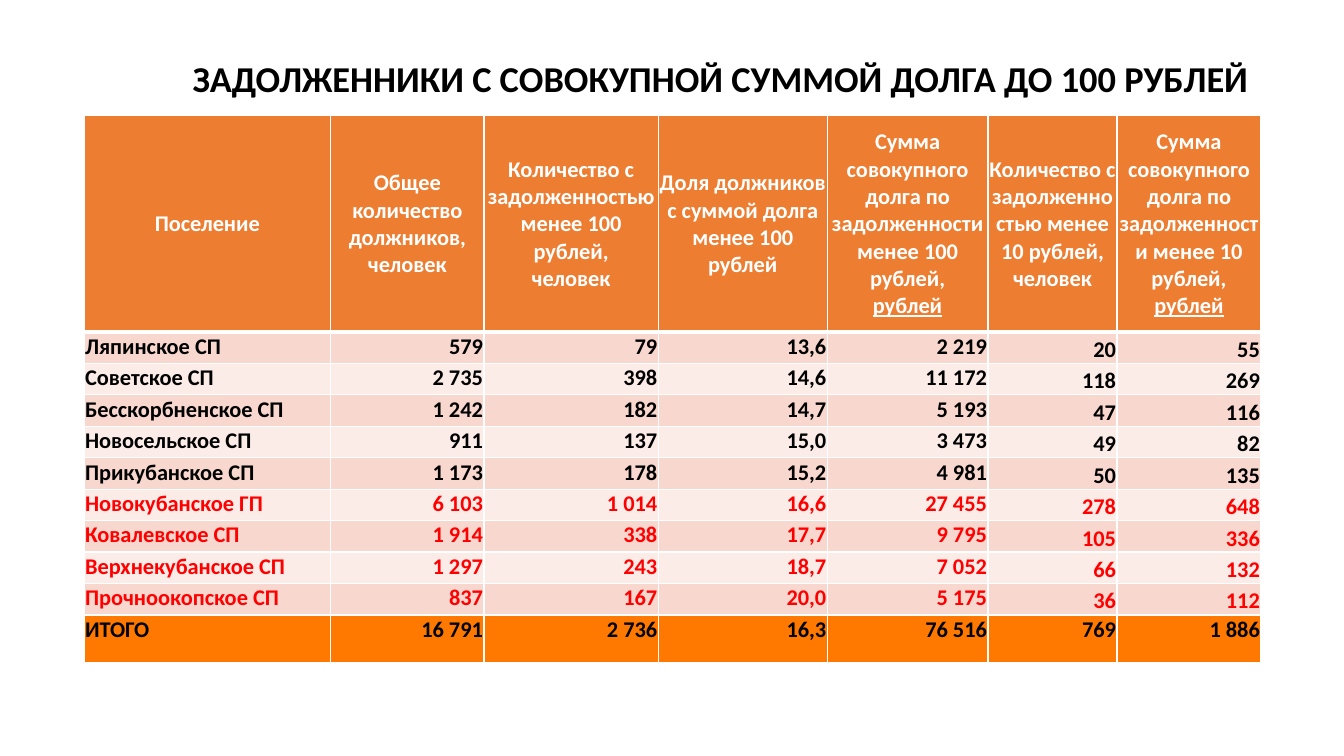
from dataclasses import dataclass

from lxml.etree import SubElement
from pptx import Presentation
from pptx.dml.color import RGBColor
from pptx.enum.text import MSO_ANCHOR, MSO_AUTO_SIZE, PP_ALIGN
from pptx.oxml.ns import qn
from pptx.util import Pt

EMU_PER_PX = 9525


@dataclass(frozen=True)
class Theme:
    font: str = "Calibri"
    title_size: int = 26
    table_size: int = 16
    dark: str = "000000"
    light: str = "FFFFFF"
    alert: str = "FF0000"
    header: str = "ED7D31"
    bands: tuple = ("F8D7CE", "FCECE8")
    total: str = "FF7900"


THEME = Theme()

TITLE = "ЗАДОЛЖЕННИКИ С СОВОКУПНОЙ СУММОЙ ДОЛГА ДО 100 РУБЛЕЙ"

# "\n" starts a paragraph, "_" switches underlining
HEADERS = [
    "Поселение",
    "Общее количество должников, человек",
    "Количество с задолженностью менее 100 рублей,\nчеловек",
    "Доля должников с суммой долга менее 100 рублей",
    "Сумма совокупного долга по задолженности менее 100 рублей,\n_рублей",
    "Количество с задолженностью менее 10 рублей, человек",
    "Сумма совокупного долга по задолженности менее 10 рублей, _рублей",
]
SETTLEMENTS = [
    ("Ляпинское СП", "579", "79", "13,6", "2 219", "20", "55"),
    ("Советское СП", "2 735", "398", "14,6", "11 172", "118", "269"),
    ("Бесскорбненское СП", "1 242", "182", "14,7", "5 193", "47", "116"),
    ("Новосельское СП", "911", "137", "15,0", "3 473", "49", "82"),
    ("Прикубанское СП", "1 173", "178", "15,2", "4 981", "50", "135"),
    ("Новокубанское ГП", "6 103", "1 014", "16,6", "27 455", "278", "648"),
    ("Ковалевское СП", "1 914", "338", "17,7", "9 795", "105", "336"),
    ("Верхнекубанское СП", "1 297", "243", "18,7", "7 052", "66", "132"),
    ("Прочноокопское СП", "837", "167", "20,0", "5 175", "36", "112"),
]
TOTAL = ("ИТОГО", "16 791", "2 736", "16,3", "76 516", "769", "1 886")

FIRST_ALERT_ROW = 5
FIRST_LOW_COLUMN = 5
COLUMN_WIDTHS = [235, 146, 166, 161, 153, 123, 137]
HEADER_HEIGHT, ROW_HEIGHT, TOTAL_HEIGHT = 206, 30, 45


def px(length):
    return length * EMU_PER_PX


def write(frame, text, size=THEME.table_size, color=THEME.dark,
          align=PP_ALIGN.LEFT, spacing=None):
    for index, line in enumerate(text.split("\n")):
        para = frame.add_paragraph() if index else frame.paragraphs[0]
        para.alignment = align
        if spacing:
            para.line_spacing = spacing
        for part, words in enumerate(line.split("_")):
            if not words:
                continue
            span = para.add_run()
            span.text = words
            span.font.name = THEME.font
            span.font.size = Pt(size)
            span.font.bold = True
            span.font.color.rgb = RGBColor.from_string(color)
            if part % 2:
                span.font.underline = True


def set_borders(cell, top=1, bottom=1):
    properties = cell._tc.get_or_add_tcPr()
    for side, points in (("L", 1), ("R", 1), ("T", top), ("B", bottom)):
        line = SubElement(properties, qn(f"a:ln{side}"), w=str(Pt(points)))
        fill = SubElement(line, qn("a:solidFill"))
        SubElement(fill, qn("a:srgbClr"), val=THEME.light)


def fill_cell(cell, text, fill, anchor=MSO_ANCHOR.TOP, top=1, bottom=1, **style):
    set_borders(cell, top, bottom)
    cell.fill.solid()
    cell.fill.fore_color.rgb = RGBColor.from_string(fill)
    cell.margin_left = cell.margin_right = cell.margin_top = px(1)
    cell.margin_bottom = 0
    cell.vertical_anchor = anchor
    write(cell.text_frame, text, **style)


def place_title(page, left, top, width, height):
    title = page.shapes.title
    title.left, title.top = px(left), px(top)
    title.width, title.height = px(width), px(height)
    frame = title.text_frame
    frame.word_wrap = True
    frame.auto_size = MSO_AUTO_SIZE.NONE
    frame.vertical_anchor = MSO_ANCHOR.MIDDLE
    write(frame, TITLE, size=THEME.title_size, align=PP_ALIGN.RIGHT, spacing=0.9)


def place_debt_table(page, left, top):
    heights = [HEADER_HEIGHT] + [ROW_HEIGHT] * len(SETTLEMENTS) + [TOTAL_HEIGHT]
    table = page.shapes.add_table(
        len(heights), len(COLUMN_WIDTHS), px(left), px(top),
        px(sum(COLUMN_WIDTHS)), px(sum(heights))).table
    table.first_row = table.horz_banding = False
    for column, width in zip(table.columns, COLUMN_WIDTHS):
        column.width = px(width)
    for row, height in zip(table.rows, heights):
        row.height = px(height)

    # Header
    for column, text in enumerate(HEADERS):
        fill_cell(table.cell(0, column), text, THEME.header, MSO_ANCHOR.MIDDLE,
                  bottom=3, color=THEME.light, align=PP_ALIGN.CENTER)

    # Settlements and total
    for index, values in enumerate(SETTLEMENTS + [TOTAL]):
        is_total = index == len(SETTLEMENTS)
        fill = THEME.total if is_total else THEME.bands[index % 2]
        is_alert = index >= FIRST_ALERT_ROW and not is_total
        for column, text in enumerate(values):
            is_low = column >= FIRST_LOW_COLUMN and not is_total
            fill_cell(table.cell(index + 1, column), text, fill,
                      MSO_ANCHOR.BOTTOM if is_low else MSO_ANCHOR.TOP,
                      top=1 if index else 3,
                      color=THEME.alert if is_alert else THEME.dark,
                      align=PP_ALIGN.RIGHT if column else PP_ALIGN.LEFT)


def main():
    deck = Presentation()
    deck.slide_width, deck.slide_height = px(1280), px(720)
    page = deck.slides.add_slide(deck.slide_layouts[5])
    place_title(page, 80, 36, 1120, 82)
    place_debt_table(page, 80, 110)
    deck.save("out.pptx")


if __name__ == "__main__":
    main()
